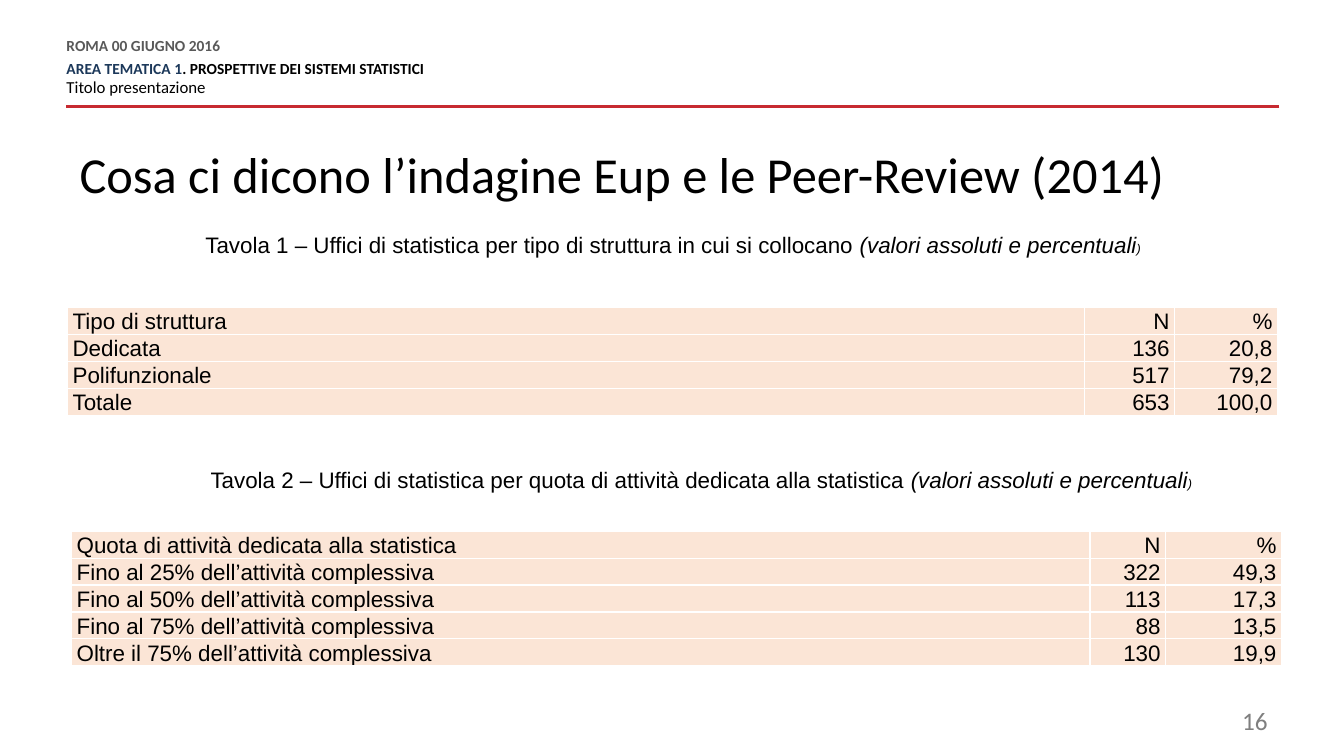
import pptx
import pptx.dml.color
import pptx.enum.shapes
import pptx.enum.text
import pptx.oxml
import pptx.oxml.ns
import pptx.util

ALIGN = pptx.enum.text.PP_ALIGN
ANCHOR = pptx.enum.text.MSO_ANCHOR
Pt = pptx.util.Pt

COLORS = {
    "black": "000000", "date": "595959", "area": "1C385A", "rule": "C72A31",
    "cell": "FBE5D6", "border": "FFFFFF", "number": "7F7F7F",
}
SLIDE_WIDTH = pptx.util.Inches(13.33)
SLIDE_HEIGHT = pptx.util.Inches(7.5)

DATE = {"name": "Calibri", "size": Pt(11), "bold": True, "color": "date"}
AREA = {**DATE, "color": "area"}
THEME = {**DATE, "color": "black"}
TALK = {"name": "Calibri", "size": Pt(12), "bold": False, "color": "black"}
TITLE = {"name": "Calibri", "size": Pt(36), "color": "black"}
NUMBER = {"name": "Calibri", "size": Pt(18), "color": "number"}
BODY = {"name": "Arial", "size": Pt(16), "color": "black"}
UNITS = {**BODY, "italic": True}
BRACKET = {**UNITS, "size": Pt(9)}

STRUCTURES = [
    ("Tipo di struttura", "N", "%"),
    ("Dedicata", "136", "20,8"),
    ("Polifunzionale", "517", "79,2"),
    ("Totale", "653", "100,0"),
]
ACTIVITY_SHARES = [
    ("Quota di attività dedicata alla statistica", "N", "%"),
    ("Fino al 25% dell’attività complessiva", "322", "49,3"),
    ("Fino al 50% dell’attività complessiva", "113", "17,3"),
    ("Fino al 75% dell’attività complessiva", "88", "13,5"),
    ("Oltre il 75% dell’attività complessiva", "130", "19,9"),
]


def region(left, top, width, height):
    """Turn percentages of the slide's size into a box."""
    return (int(SLIDE_WIDTH * left / 100), int(SLIDE_HEIGHT * top / 100),
            int(SLIDE_WIDTH * width / 100), int(SLIDE_HEIGHT * height / 100))


def rgb(name):
    return pptx.dml.color.RGBColor.from_string(COLORS[name])


def apply(target, values):
    for name, value in values.items():
        setattr(target, name, value)


def write(paragraph, runs, **layout):
    apply(paragraph, layout)
    for text, style in runs:
        run = paragraph.add_run()
        run.text = text
        apply(run.font, {key: value for key, value in style.items() if key != "color"})
        run.font.color.rgb = rgb(style["color"])


def add_text(slide, box, paragraphs, **frame_format):
    """Add a text box from pairs of runs and paragraph layout."""
    frame = slide.shapes.add_textbox(*box).text_frame
    apply(frame, {"word_wrap": True, **frame_format})
    for index, (runs, layout) in enumerate(paragraphs):
        paragraph = frame.add_paragraph() if index else frame.paragraphs[0]
        write(paragraph, runs, **layout)


def draw_header(slide, box):
    left, top, width, height = box
    bottom = top + height
    rule = slide.shapes.add_connector(
        pptx.enum.shapes.MSO_CONNECTOR.STRAIGHT, left + width, bottom, left, bottom)
    rule.line.color.rgb = rgb("rule")
    rule.line.width = Pt(2)
    rule._element.spPr.append(pptx.oxml.parse_xml(
        f"<a:effectLst {pptx.oxml.ns.nsdecls('a')}/>"))
    spacing = {"line_spacing": Pt(10.8)}
    add_text(slide, (left, top, int(width * 0.69), int(height * 0.88)), [
        ([("ROMA 00 GIUGNO 2016", DATE)], {**spacing, "space_after": Pt(6)}),
        ([("AREA TEMATICA 1", AREA),
          (". PROSPETTIVE DEI SISTEMI STATISTICI", THEME)], spacing),
        ([("Titolo presentazione", TALK)],
         {**spacing, "space_before": Pt(3), "space_after": Pt(6)}),
    ], margin_left=0, margin_right=0, margin_top=0, margin_bottom=0)


def draw_title(slide, box, title):
    add_text(slide, box, [([(title, TITLE)], {"line_spacing": 0.9})])


def draw_page_number(slide, box, number):
    add_text(slide, box, [([(number, NUMBER)], {"alignment": ALIGN.RIGHT})])


def draw_caption(slide, box, caption):
    runs = [(caption, BODY), ("(valori assoluti e percentuali", UNITS), (")", BRACKET)]
    add_text(slide, box, [(runs, {"alignment": ALIGN.JUSTIFY})],
             word_wrap=False, vertical_anchor=ANCHOR.MIDDLE)


def add_borders(cell):
    properties = cell._tc.get_or_add_tcPr()
    for position, side in enumerate(("lnL", "lnR", "lnT", "lnB")):
        properties.insert(position, pptx.oxml.parse_xml(
            f"<a:{side} {pptx.oxml.ns.nsdecls('a')} w='{Pt(1)}'><a:solidFill>"
            f"<a:srgbClr val='{COLORS['border']}'/></a:solidFill></a:{side}>"))


def draw_table(slide, box, rows, twelfths):
    """Fill the box with equal rows; column widths are in twelfths of it."""
    table = slide.shapes.add_table(len(rows), len(twelfths), *box).table
    apply(table, {"first_row": False, "horz_banding": False})
    for column, share in zip(table.columns, twelfths):
        column.width = int(box[2] * share / 12)
    for row_index, values in enumerate(rows):
        table.rows[row_index].height = box[3] // len(rows)
        for column_index, value in enumerate(values):
            cell = table.cell(row_index, column_index)
            apply(cell, {"margin_left": Pt(3.6), "margin_right": Pt(3.6), "margin_top": 0,
                         "margin_bottom": 0, "vertical_anchor": ANCHOR.BOTTOM})
            cell.fill.solid()
            cell.fill.fore_color.rgb = rgb("cell")
            add_borders(cell)
            write(cell.text_frame.paragraphs[0], [(value, BODY)],
                  alignment=ALIGN.RIGHT if column_index else ALIGN.LEFT)


def main():
    deck = pptx.Presentation()
    apply(deck, {"slide_width": SLIDE_WIDTH, "slide_height": SLIDE_HEIGHT})
    slide = deck.slides.add_slide(deck.slide_layouts[6])
    draw_header(slide, region(4.95, 5.2, 90.25, 8.93))
    draw_title(slide, region(5.18, 19.2, 85, 21.47),
               "Cosa ci dicono l’indagine Eup e le Peer-Review (2014)")
    draw_page_number(slide, region(71.72, 92.67, 23.33, 5.33), "16")
    draw_table(slide, region(5.03, 40.67, 90.02, 13.1), STRUCTURES, (10.09, 0.89, 1.02))
    draw_caption(slide, region(14.55, 29.87, 71.94, 4.93),
                 "Tavola 1 – Uffici di statistica per tipo di struttura in cui si collocano ")
    draw_table(slide, region(5.33, 70.27, 90.02, 17.73), ACTIVITY_SHARES, (10.1, 0.75, 1.15))
    draw_caption(slide, region(14.93, 60.93, 75.39, 4.93),
                 "Tavola 2 – Uffici di statistica per quota di attività dedicata alla statistica ")
    deck.save("out.pptx")


if __name__ == "__main__":
    main()
